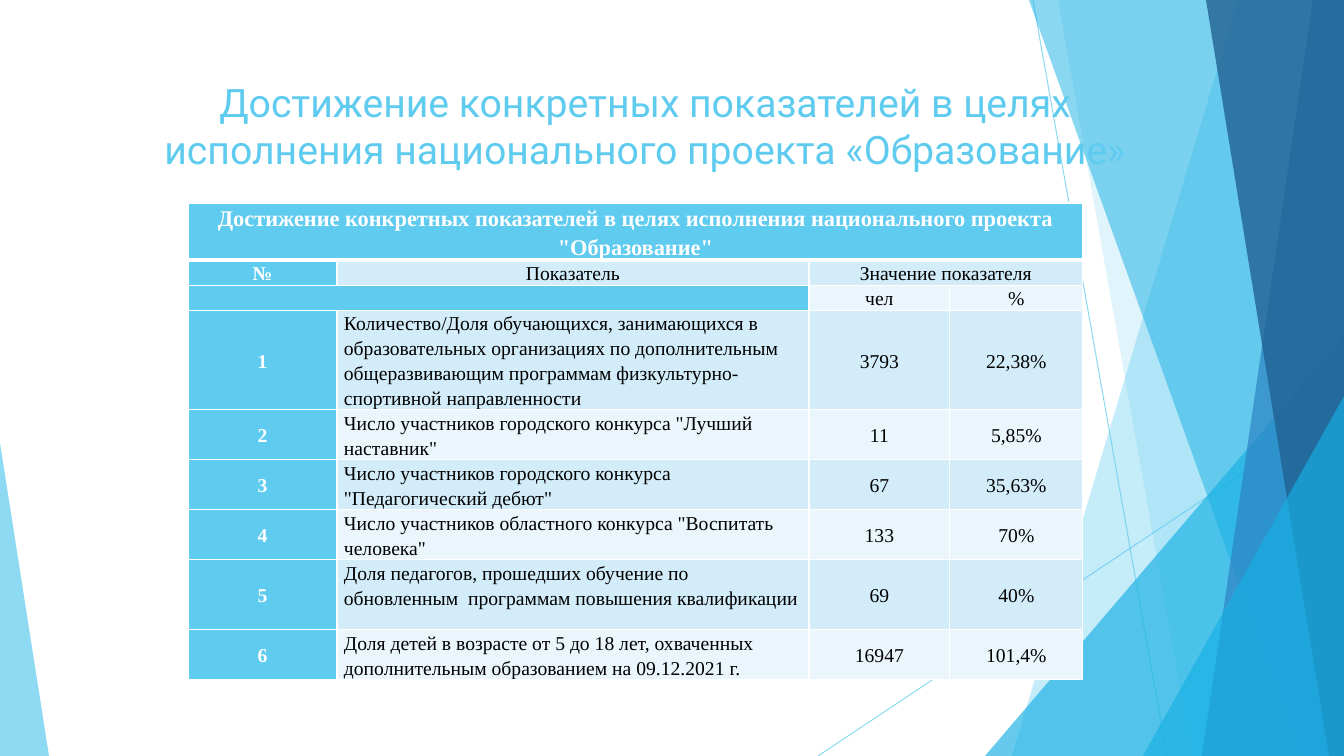
from lxml import etree
from pptx import Presentation
from pptx.dml.color import RGBColor
from pptx.enum.shapes import MSO_CONNECTOR, MSO_SHAPE
from pptx.enum.text import MSO_ANCHOR, MSO_AUTO_SIZE, PP_ALIGN
from pptx.oxml.ns import qn
from pptx.util import Emu, Pt

TRIANGLE = MSO_SHAPE.ISOSCELES_TRIANGLE
STRAIGHT = MSO_CONNECTOR.STRAIGHT
TOP, MIDDLE = MSO_ANCHOR.TOP, MSO_ANCHOR.MIDDLE
LEFT, CENTER = PP_ALIGN.LEFT, PP_ALIGN.CENTER

# Content
SLIDE_W, SLIDE_H = 1344, 756
EMU_PER_PX = 914400 / 100.8
SKY, CYAN, WHITE, BLACK = "5FCBEF", "17B0E4", "FFFFFF", "000000"
BANDS = ("EAF6FC", "D2ECF9")

TITLE = "Достижение конкретных показателей в целях исполнения национального проекта «Образование»"
TITLE_BOX = (118, 73, 1054, 35)

THIN_LINES = [(1033, 0, 1167, SLIDE_H), (SLIDE_W, 406, 818, SLIDE_H)]
# Facets run to the right edge: ("facet", top x, bottom x, colour, opacity %)
# Triangles: ("triangle", left, top, width, apex position, colour, opacity %)
DECORATION = [
    ("facet", 1238, 1012, SKY, 36),
    ("facet", 1058, 1192, SKY, 20),
    ("triangle", 985, 336, 359, 1, CYAN, 66),
    ("facet", 1029, 1301, CYAN, 50),
    ("facet", 1313, 1202, "2E83C3", 70),
    ("facet", 1206, 1329, "226292", 80),
    ("triangle", 1143, 396, 201, 1, CYAN, 66),
    ("triangle", 0, 443, 49, 0, SKY, 70),
]

TABLE_LEFT, TABLE_TOP = 188, 203
COLUMN_WIDTHS = [149, 472, 141, 133]
ROW_HEIGHTS = [57, 25, 25, 99, 50, 50, 49, 70, 50]
MERGES = [(0, 0, 3), (1, 2, 3), (2, 0, 1)]  # row, first column, last column
INDICATORS = [
    ('Достижение конкретных показателей в целях исполнения национального проекта "Образование"', "", "", ""),
    ("№", "Показатель", "Значение показателя", ""),
    ("", "", "чел", "%"),
    ("1", "Количество/Доля обучающихся, занимающихся в образовательных организациях по дополнительным "
          "общеразвивающим программам физкультурно-спортивной направленности", "3793", "22,38%"),
    ("2", 'Число участников городского конкурса "Лучший наставник"', "11", "5,85%"),
    ("3", 'Число участников городского конкурса "Педагогический дебют"', "67", "35,63%"),
    ("4", 'Число участников областного конкурса "Воспитать человека"', "133", "70%"),
    ("5", "Доля педагогов, прошедших обучение по обновленным  программам повышения квалификации", "69", "40%"),
    ("6", "Доля детей в возрасте от 5 до 18 лет, охваченных дополнительным образованием на 09.12.2021 г.",
     "16947", "101,4%"),
]


def px(length):
    return Emu(round(length * EMU_PER_PX))


def rgb(color):
    return RGBColor.from_string(color)


def set_opacity(fill, percent):
    color = fill.fore_color._xFill.find(qn("a:srgbClr"))
    etree.SubElement(color, qn("a:alpha"), val=str(percent * 1000))


def style_run(run, font, size, color, bold=False):
    run.font.name, run.font.size, run.font.bold = font, Pt(size), bold
    run.font.color.rgb = rgb(color)


def add_thin_line(shapes, x1, y1, x2, y2):
    line = shapes.add_connector(STRAIGHT, px(x1), px(y1), px(x2), px(y2))
    line.line.width = Pt(0.75)
    line.line.fill.solid()
    line.line.fill.fore_color.rgb = rgb(SKY)
    set_opacity(line.line.fill, 70)
    etree.SubElement(line.element.spPr, qn("a:effectLst"))


def add_decoration(shapes, kind, *geometry, color, opacity):
    if kind == "facet":
        top_x, bottom_x = geometry
        outline = shapes.build_freeform(top_x, 0, scale=EMU_PER_PX)
        outline.add_line_segments([(SLIDE_W, 0), (SLIDE_W, SLIDE_H), (bottom_x, SLIDE_H)], close=True)
        piece = outline.convert_to_shape()
    else:
        left, top, width, apex = geometry
        piece = shapes.add_shape(TRIANGLE, px(left), px(top), px(width), px(SLIDE_H - top))
        piece.adjustments[0] = apex
    piece.shadow.inherit = False
    piece.line.fill.background()
    piece.fill.solid()
    piece.fill.fore_color.rgb = rgb(color)
    set_opacity(piece.fill, opacity)


def set_borders(cell, row):
    properties = cell._tc.get_or_add_tcPr()
    widths = {"lnL": 1, "lnR": 1, "lnT": 3 if row == 1 else 1, "lnB": 3 if row == 0 else 1}
    for position, (side, width) in enumerate(widths.items()):
        border = etree.Element(qn("a:" + side), w=str(Pt(width)))
        fill = etree.SubElement(border, qn("a:solidFill"))
        etree.SubElement(fill, qn("a:srgbClr"), val=WHITE)
        properties.insert(position, border)


def fill_cell(cell, row, column, text):
    on_sky = row == 0 or column == 0 or (row == 2 and column == 1)
    cell.fill.solid()
    cell.fill.fore_color.rgb = rgb(SKY if on_sky else BANDS[row % 2])
    set_borders(cell, row)
    cell.margin_left = cell.margin_right = px(7)
    cell.margin_top = cell.margin_bottom = 0
    cell.vertical_anchor = TOP if row == 0 or column == 1 else MIDDLE
    paragraph = cell.text_frame.paragraphs[0]
    paragraph.text = text
    paragraph.alignment = LEFT if column == 1 and row > 2 else CENTER
    paragraph.line_spacing = 1.15
    paragraph.space_after = Pt(10)
    for run in paragraph.runs:
        style_run(run, "Times New Roman", 16 if row == 0 else 14, WHITE if on_sky else BLACK, on_sky)
    if not text:  # keeps empty cells from stretching their row
        etree.SubElement(paragraph._p, qn("a:endParaRPr"), sz="1400")


def add_indicator_table(shapes):
    table = shapes.add_table(len(ROW_HEIGHTS), len(COLUMN_WIDTHS), px(TABLE_LEFT), px(TABLE_TOP),
                             px(sum(COLUMN_WIDTHS)), px(sum(ROW_HEIGHTS))).table
    for column, width in zip(table.columns, COLUMN_WIDTHS):
        column.width = px(width)
    for row, height in zip(table.rows, ROW_HEIGHTS):
        row.height = px(height)
    for r, texts in enumerate(INDICATORS):
        for c, text in enumerate(texts):
            fill_cell(table.cell(r, c), r, c, text)
    for r, first, last in MERGES:
        table.cell(r, first).merge(table.cell(r, last))


def place_title(title):
    title.left, title.top, title.width, title.height = map(px, TITLE_BOX)
    frame = title.text_frame
    frame.text = TITLE
    frame.word_wrap = True
    frame.auto_size = MSO_AUTO_SIZE.NONE
    frame.vertical_anchor = TOP
    frame.paragraphs[0].alignment = CENTER
    style_run(frame.paragraphs[0].runs[0], "Roboto", 28, SKY)
    # Bring the title in front of the decoration
    title.element.getparent().append(title.element)


def main():
    deck = Presentation()
    deck.slide_width, deck.slide_height = px(SLIDE_W), px(SLIDE_H)
    slide = deck.slides.add_slide(deck.slide_layouts[5])

    # Decoration
    for ends in THIN_LINES:
        add_thin_line(slide.shapes, *ends)
    for *piece, color, opacity in DECORATION:
        add_decoration(slide.shapes, *piece, color=color, opacity=opacity)

    # Title and table
    place_title(slide.shapes.title)
    add_indicator_table(slide.shapes)
    deck.save("out.pptx")


if __name__ == "__main__":
    main()
